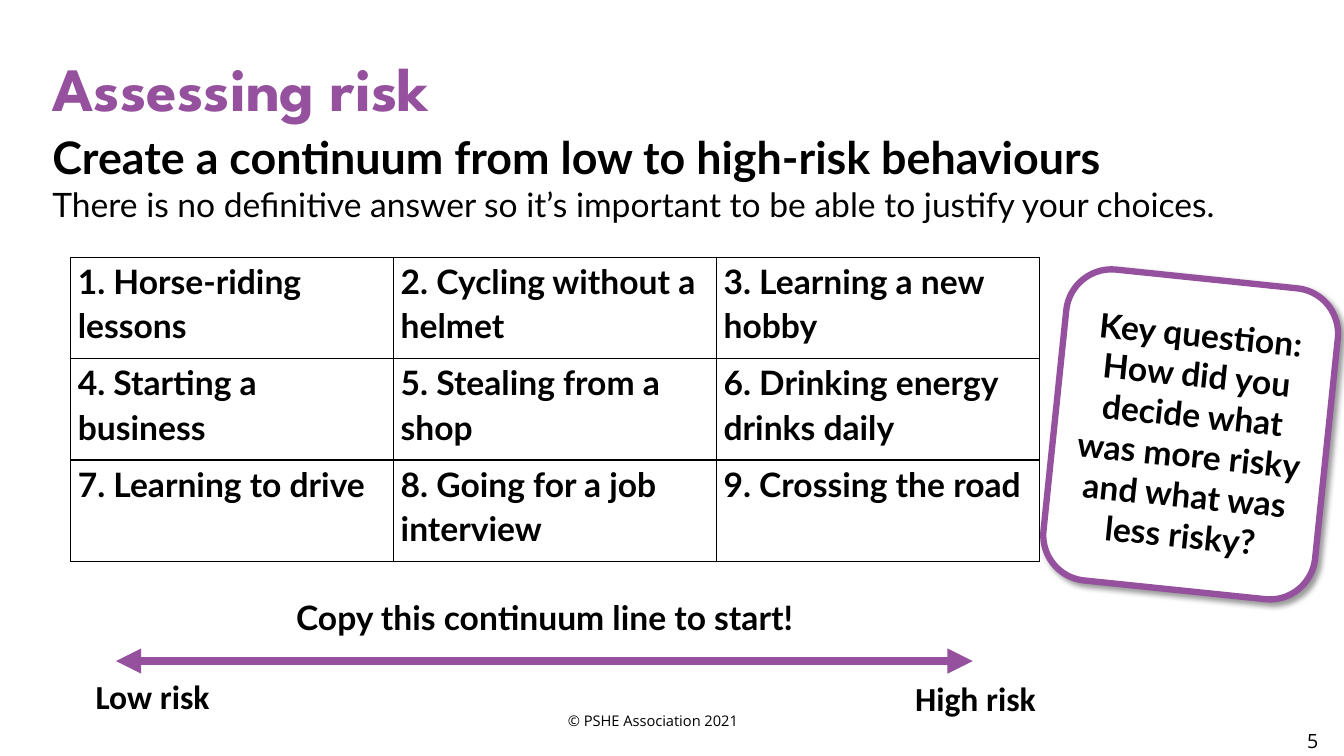
"""Build the "Assessing risk" lesson slide."""
from dataclasses import dataclass

from pptx import Presentation
from pptx.dml.color import RGBColor
from pptx.enum.shapes import MSO_CONNECTOR as Connector, MSO_SHAPE as Preset
from pptx.enum.text import MSO_ANCHOR as Anchor, MSO_AUTO_SIZE as AutoSize, PP_ALIGN as Align
from pptx.oxml import parse_xml
from pptx.oxml.ns import nsdecls
from pptx.util import Pt

COLOURS = {"purple": "95519E", "black": "000000", "white": "FFFFFF"}
BEHAVIOURS = [
    ["1. Horse-riding lessons", "2. Cycling without a helmet", "3. Learning a new hobby"],
    ["4. Starting a business", "5. Stealing from a shop", "6. Drinking energy drinks daily"],
    ["7. Learning to drive", "8. Going for a job interview", "9. Crossing the road"],
]


@dataclass(frozen=True)
class Style:
    font: str = "Lato"
    size: float = 24
    bold: bool = True
    colour: str = "black"


@dataclass(frozen=True)
class Label:
    text: str
    box: tuple[float, float, float, float]
    style: Style
    align: Align = Align.LEFT
    anchor: Anchor = Anchor.TOP


SMALL = Style("Open Sans", 10.5, False)
RISK = Style("Calibri")
LABELS = [
    Label("5", (926.6, 517, 33, 29), Style("Open Sans", 14, False)),
    Label("© PSHE Association 2021", (0, 500.4, 933, 29), SMALL, Align.CENTER, Anchor.MIDDLE),
    Label("Low risk", (61.2, 479.5, 225, 36), RISK),
    Label("High risk", (646.6, 481, 225, 36), RISK),
    Label("Copy this continuum line to start!", (149, 422.6, 480, 36), Style(), Align.CENTER),
]


def colour(name: str) -> RGBColor:
    return RGBColor.from_string(COLOURS[name])


def place(shape, box: tuple[float, float, float, float]) -> None:
    shape.left, shape.top, shape.width, shape.height = map(Pt, box)


def format_paragraph(paragraph, style: Style, align: Align = Align.LEFT) -> None:
    paragraph.alignment = align
    for run in paragraph.runs:
        run.font.name = style.font
        run.font.size = Pt(style.size)
        run.font.bold = style.bold
        run.font.color.rgb = colour(style.colour)


def fill_text(shape, text: str, styles: list[Style], align: Align = Align.LEFT,
              anchor: Anchor = Anchor.TOP) -> None:
    frame = shape.text_frame
    frame.text = text
    frame.word_wrap = True
    frame.auto_size = AutoSize.NONE
    frame.vertical_anchor = anchor
    for paragraph, style in zip(frame.paragraphs, styles):
        format_paragraph(paragraph, style, align)


def add_label(slide, label: Label) -> None:
    shape = slide.shapes.add_textbox(*map(Pt, label.box))
    fill_text(shape, label.text, [label.style], label.align, label.anchor)


def add_headings(slide) -> None:
    title, body = slide.placeholders
    place(title, (30.2, 32.4, 844, 60.5))
    fill_text(title, "Assessing risk", [Style("League Spartan", 44, True, "purple")])
    place(body, (30.2, 89.3, 875.5, 75))
    fill_text(body, "Create a continuum from low to high-risk behaviours\n"
              "There is no definitive answer so it’s important to be able to justify your choices.",
              [Style(size=32), Style(bold=False)])
    for paragraph in body.text_frame.paragraphs:
        properties = paragraph._p.get_or_add_pPr()
        properties.set("marL", "0")
        properties.set("indent", "0")
        properties.append(parse_xml(f'<a:buNone {nsdecls("a")}/>'))
        paragraph.space_before = Pt(0)


def add_borders(cell) -> None:
    properties = cell._tc.get_or_add_tcPr()
    for side in "LRTB":
        properties.append(parse_xml(
            f'<a:ln{side} {nsdecls("a")} w="{Pt(1)}"><a:solidFill>'
            f'<a:srgbClr val="{COLOURS["black"]}"/></a:solidFill></a:ln{side}>'))


def add_behaviour_table(slide) -> None:
    rows, columns = len(BEHAVIOURS), len(BEHAVIOURS[0])
    table = slide.shapes.add_table(rows, columns, Pt(50.4), Pt(183.8), Pt(692), Pt(217.2)).table
    table.first_row = table.horz_banding = False
    for row, texts in enumerate(BEHAVIOURS):
        for column, text in enumerate(texts):
            cell = table.cell(row, column)
            cell.text_frame.text = text
            cell.margin_left = cell.margin_right = Pt(5.2)
            cell.margin_top = cell.margin_bottom = Pt(0)
            paragraph = cell.text_frame.paragraphs[0]
            paragraph.line_spacing = 1.1
            paragraph.space_after = Pt(18)
            format_paragraph(paragraph, Style())
            add_borders(cell)
            cell.fill.solid()
            cell.fill.fore_color.rgb = colour("white")


def add_key_question(slide) -> None:
    card = slide.shapes.add_shape(Preset.ROUNDED_RECTANGLE, Pt(753), Pt(198.7), Pt(195), Pt(223.2))
    card.rotation = 5.9
    card.fill.solid()
    card.fill.fore_color.rgb = colour("white")
    card.line.color.rgb = colour("purple")
    card.line.width = Pt(4.5)
    card.shadow.inherit = False
    card._element.spPr.find("{*}effectLst").append(parse_xml(
        f'<a:outerShdw {nsdecls("a")} blurRad="{Pt(4)}" dist="{Pt(3)}" dir="2700000" '
        f'algn="tl" rotWithShape="0"><a:srgbClr val="{COLOURS["black"]}">'
        '<a:alpha val="40000"/></a:srgbClr></a:outerShdw>'))
    fill_text(card, "Key question:\n"
              "How did you decide what was more risky and what was less risky?",
              [Style(), Style()], Align.CENTER, Anchor.MIDDLE)


def add_continuum_line(slide) -> None:
    arrow = slide.shapes.add_connector(Connector.STRAIGHT, Pt(82.8), Pt(472.2), Pt(694.8), Pt(472.2))
    arrow.line.color.rgb = colour("purple")
    arrow.line.width = Pt(6)
    line = arrow.line._get_or_add_ln()
    for end in ("headEnd", "tailEnd"):
        line.append(parse_xml(f'<a:{end} {nsdecls("a")} type="triangle"/>'))
    arrow._element.spPr.append(parse_xml(f'<a:effectLst {nsdecls("a")}/>'))


def main() -> None:
    presentation = Presentation()
    presentation.slide_width, presentation.slide_height = Pt(960), Pt(540)
    slide = presentation.slides.add_slide(presentation.slide_layouts[1])
    add_headings(slide)
    add_behaviour_table(slide)
    add_key_question(slide)
    add_continuum_line(slide)
    for label in LABELS:
        add_label(slide, label)
    presentation.save("out.pptx")


if __name__ == "__main__":
    main()
